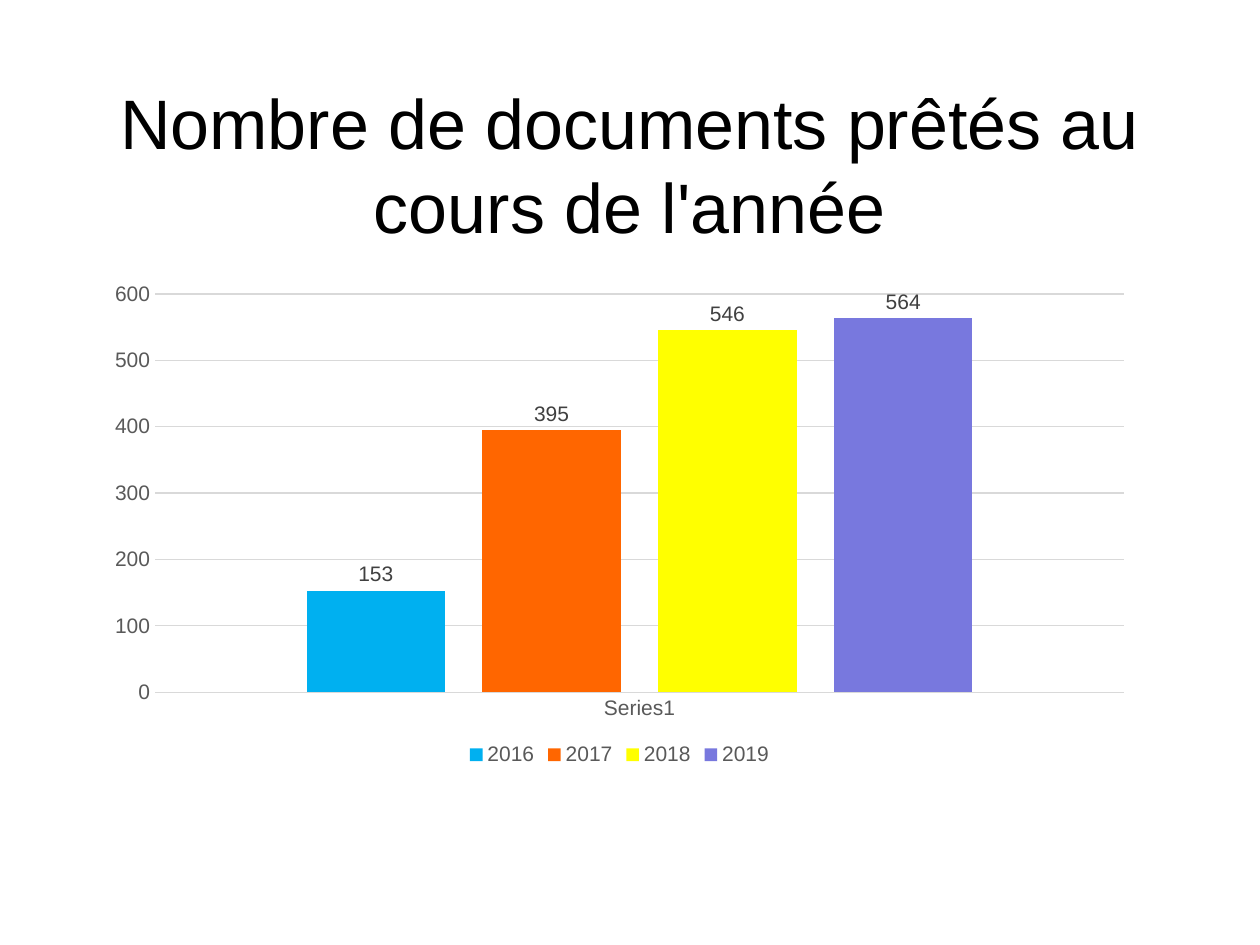
from pptx import Presentation
from pptx.chart.data import CategoryChartData
from pptx.dml.color import RGBColor
from pptx.enum.chart import XL_CHART_TYPE as ChartType, XL_LABEL_POSITION as LabelPosition
from pptx.enum.chart import XL_LEGEND_POSITION as LegendPosition, XL_TICK_MARK as TickMark
from pptx.enum.text import MSO_ANCHOR as Anchor, PP_ALIGN as Align
from pptx.util import Emu, Pt

PX = 914400 / 126
GREY, RULE = "595959", "D9D9D9"
loans = {
    "2016": (153, "00B0F0"),
    "2017": (395, "FF6600"),
    "2018": (546, "FFFF00"),
    "2019": (564, "7878DE"),
}


def box(*lengths):
    """Turn px lengths into EMU."""
    return [Emu(round(length * PX)) for length in lengths]


def paint(target, color, **formats):
    """Set the colour of a font, fill or line, and any other format values."""
    if hasattr(target, "solid"):
        target.solid()
        target = target.fore_color
    else:
        for key, value in formats.items():
            setattr(target, key, value)
        target = target.color
    target.rgb = RGBColor.from_string(color)


prs = Presentation()
prs.slide_width, prs.slide_height = box(1260, 945)
slide = prs.slides.add_slide(prs.slide_layouts[6])

heading = slide.shapes.add_textbox(*box(94, 84, 1071, 158)).text_frame
heading.word_wrap = True
heading.vertical_anchor = Anchor.MIDDLE
title = heading.paragraphs[0]
title.text = "Nombre de documents prêtés au cours de l'année"
title.alignment = Align.CENTER
paint(title.font, "000000", name="Arial", size=Pt(40))

data = CategoryChartData()
data.categories = ["Series1"]
for year, (count, _) in loans.items():
    data.add_series(year, [count])
chart = slide.shapes.add_chart(
    ChartType.COLUMN_CLUSTERED, *box(94, 273, 1051, 498), data).chart
chart.has_title = False
paint(chart.font, "000000", name="Arial", size=Pt(10))

chart.has_legend = True
legend = chart.legend
legend.position = LegendPosition.BOTTOM
legend.include_in_layout = False

category_axis, value_axis = chart.category_axis, chart.value_axis
for axis in (category_axis, value_axis):
    axis.major_tick_mark = axis.minor_tick_mark = TickMark.NONE
    paint(axis.tick_labels.font, GREY, name="Arial", size=Pt(12))
paint(legend.font, GREY, name="Arial", size=Pt(12))
value_axis.format.line.fill.background()
value_axis.has_major_gridlines = True
for line in (category_axis.format.line, value_axis.major_gridlines.format.line):
    paint(line, RULE, width=Pt(0.75))

plot = chart.plots[0]
plot.gap_width, plot.overlap = 219, -27
plot.vary_by_categories = False
for series, (_, color) in zip(plot.series, loans.values()):
    paint(series.format.fill, color)
    series.invert_if_negative = False
    labels = series.data_labels
    labels.show_value = True
    labels.position = LabelPosition.OUTSIDE_END
    paint(labels.font, "404040", name="Arial", size=Pt(12))

prs.save("out.pptx")
